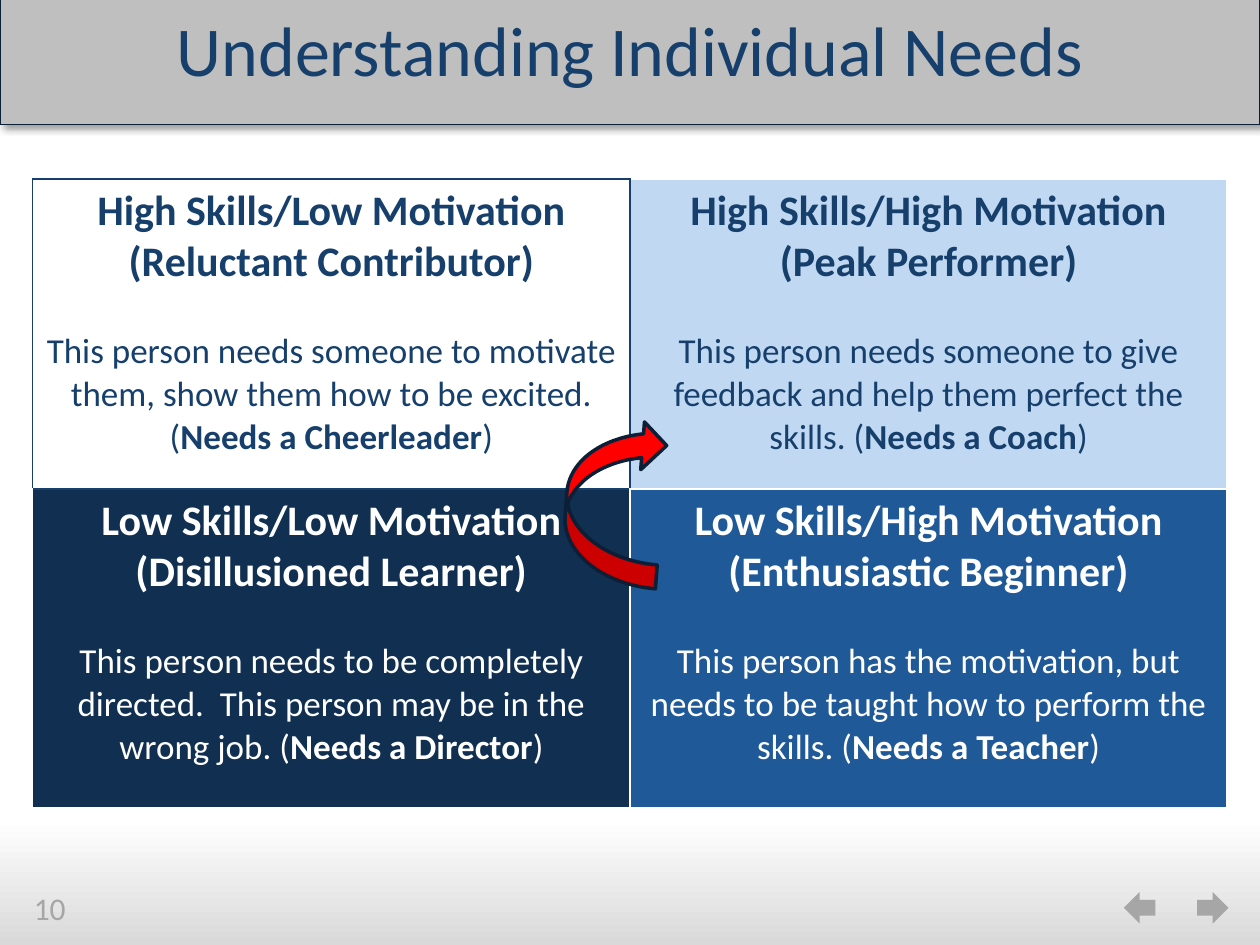
import pptx
import pptx.dml.color
import pptx.enum.dml
import pptx.enum.shapes
import pptx.enum.text
import pptx.oxml.ns
import pptx.util
from lxml import etree

Inches, Pt = pptx.util.Inches, pptx.util.Pt
RGB = pptx.dml.color.RGBColor.from_string
qn = pptx.oxml.ns.qn
KIND = pptx.enum.shapes.MSO_SHAPE
CENTER = pptx.enum.text.PP_ALIGN.CENTER

HUES = {"navy": "163F6C", "deep": "102F51", "blue": "1F5998", "pale": "C0D8F2",
        "white": "FFFFFF", "edge": "0B1F36", "bar": "BFBFBF", "mist": "D9D9D9",
        "gray": "A6A6A6", "red": "FF0000"}


def draw(kind, box, fill=None, line=None, width=1):
    """Add a preset shape; without a fill colour its fill is left to the caller."""
    shape = deck_page.shapes.add_shape(kind, *map(Inches, box))
    shape.shadow.inherit = False
    if fill:
        shape.fill.solid()
        shape.fill.fore_color.rgb = RGB(HUES[fill])
    if line:
        shape.line.color.rgb = RGB(HUES[line])
        shape.line.width = Pt(width)
    else:
        shape.line.fill.background()
    return shape


def write(para, text, hue, size, bold=False):
    run = para.add_run()
    run.text = text
    looks = {"name": "Calibri", "size": Pt(size), "bold": bold}
    for key, value in looks.items():
        setattr(run.font, key, value)
    run.font.color.rgb = RGB(HUES[hue])


deck = pptx.Presentation()
deck.slide_width, deck.slide_height = Inches(10), Inches(7.5)
deck_page = deck.slides.add_slide(deck.slide_layouts[6])

# Footer: fading band, page arrows and number
band = draw(KIND.RECTANGLE, (0, 6.5, 10, 1))
band.fill.gradient()
band.fill.gradient_angle = 270
for stop, (hue, place) in zip(band.fill.gradient_stops, (("white", 0), ("mist", 1))):
    stop.color.rgb = RGB(HUES[hue])
    stop.position = place
for kind, left in ((KIND.RIGHT_ARROW, 9.5), (KIND.LEFT_ARROW, 8.92)):
    draw(kind, (left, 7.08, 0.25, 0.25), "gray")
number = deck_page.shapes.add_textbox(Inches(0.17), Inches(7.01), Inches(1), Inches(0.4))
number.text_frame.word_wrap = True
write(number.text_frame.paragraphs[0], "10", "gray", 18)

# Skill and motivation grid; borders run left, right, top, bottom
cells = [
    ("High Skills/Low Motivation", "(Reluctant Contributor)",
     "This person needs someone to motivate them, show them how to be excited. (",
     "Needs a Cheerleader", "navy", "white", ("navy", "navy", "navy", "navy")),
    ("High Skills/High Motivation", "(Peak Performer)",
     "This person needs someone to give feedback and help them perfect the skills. (",
     "Needs a Coach", "navy", "pale", ("navy", "white", "white", "white")),
    ("Low Skills/Low Motivation", "(Disillusioned Learner)",
     "This person needs to be completely directed.  This person may be in the wrong job. (",
     "Needs a Director", "white", "deep", ("white", "white", "navy", "white")),
    ("Low Skills/High Motivation", "(Enthusiastic Beginner)",
     "This person has the motivation, but needs to be taught how to perform the skills. (",
     "Needs a Teacher", "white", "blue", ("white", "white", "white", "white")),
]
grid = deck_page.shapes.add_table(2, 2, Inches(0.26), Inches(1.42),
                                  Inches(9.48), Inches(4.99)).table
grid.first_row = grid.horz_banding = False
for row, height in zip(grid.rows, (2.46, 2.53)):
    row.height = Inches(height)
for cell, (head, role, need, help_, ink, fill, edges) in zip(grid.iter_cells(), cells):
    cell.fill.solid()
    cell.fill.fore_color.rgb = RGB(HUES[fill])
    props = cell._tc.get_or_add_tcPr()
    for spot, (side, hue) in enumerate(zip("LRTB", edges)):
        rule = etree.Element(qn("a:ln" + side), w=str(Pt(1)))
        paint = etree.SubElement(rule, qn("a:solidFill"))
        etree.SubElement(paint, qn("a:srgbClr"), val=HUES[hue])
        props.insert(spot, rule)
    frame = cell.text_frame
    title, label, note = frame.paragraphs[0], frame.add_paragraph(), frame.add_paragraph()
    for para in (title, label, note):
        para.alignment = CENTER
    note.space_before = Pt(24.4)
    write(title, head, ink, 24, True)
    write(label, role, ink, 24, True)
    for text, bold in ((need, False), (help_, True), (")", False)):
        write(note, text, ink, 20, bold)

swoop = draw(KIND.CURVED_DOWN_ARROW, (4.21, 3.6, 1.33, 0.76), "red", "edge", 2)
swoop.rotation = 274.5

# Title bar with a soft shadow
bar = draw(KIND.RECTANGLE, (0, -0.01, 10, 1), "bar", "edge", 0.75)
glow = etree.SubElement(bar._element.spPr.find(qn("a:effectLst")), qn("a:outerShdw"),
                        blurRad=str(Pt(4)), dist=str(Pt(3)), dir=str(45 * 60000),
                        algn="tl", rotWithShape="0")
shade = etree.SubElement(glow, qn("a:srgbClr"), val="000000")
etree.SubElement(shade, qn("a:alpha"), val="40000")
bar.text_frame.vertical_anchor = pptx.enum.text.MSO_ANCHOR.MIDDLE
title = bar.text_frame.paragraphs[0]
title.alignment = CENTER
title.line_spacing = Pt(33)
write(title, "Understanding Individual Needs", "navy", 40)

deck.save("out.pptx")
